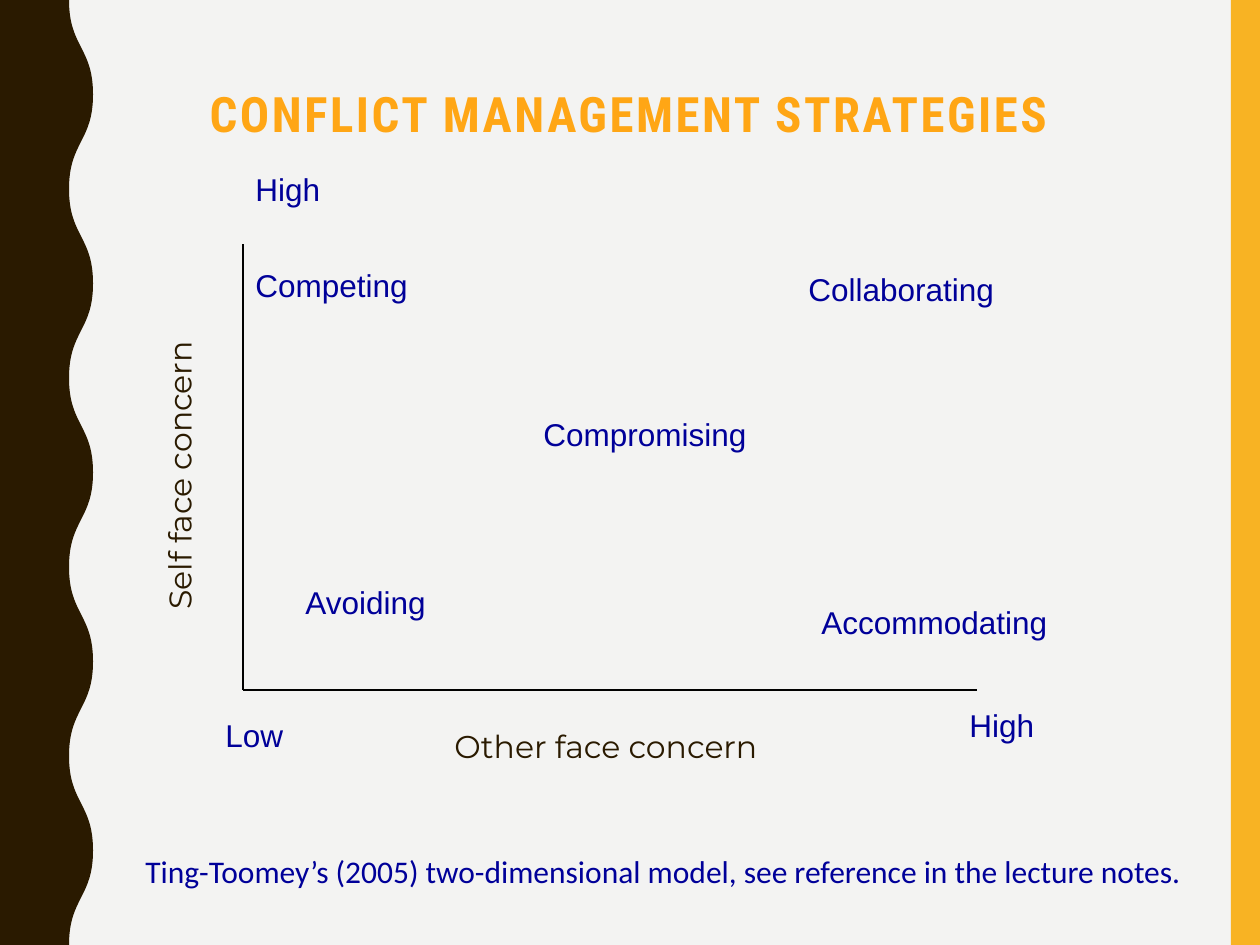
from lxml import etree
from pptx import Presentation
from pptx import util as u
from pptx.dml.color import RGBColor
from pptx.enum import shapes, text
from pptx.oxml import ns

PX = 914400 / 126
WIDTH, HEIGHT = 1260, 945
COLORS = {"paper": "F3F3F2", "stripe": "F8B323", "wave": "2A1A00",
          "title": "FFA615", "label": "000099", "axis": "000000"}
LABEL = {"name": "Arial", "size": u.Pt(18)}
AXIS_TITLE = {"name": "Montserrat", "size": u.Pt(18)}
SOURCE = {"name": "Calibri", "size": u.Pt(18)}
TITLE = {"name": "Roboto Condensed", "size": u.Pt(27.9), "bold": True}


def emu(*lengths):
    return [round(length * PX) for length in lengths]


def color(name):
    return RGBColor.from_string(COLORS[name])


def paint(shape, name):
    shape.shadow.inherit = False
    shape.fill.solid()
    shape.fill.fore_color.rgb = color(name)
    shape.line.fill.background()


def write(para, words, font, color_name):
    span = para.add_run()
    span.text = words
    for key, value in font.items():
        setattr(span.font, key, value)
    span.font.color.rgb = color(color_name)
    return span


def add_text(page, box, words, font, color_name, wrap=False):
    frame = page.shapes.add_textbox(*emu(*box)).text_frame
    frame.word_wrap = wrap
    frame.auto_size = text.MSO_AUTO_SIZE.SHAPE_TO_FIT_TEXT
    write(frame.paragraphs[0], words, font, color_name)
    return frame


def add_axis(page, *ends):
    axis = page.shapes.add_connector(shapes.MSO_CONNECTOR.STRAIGHT, *emu(*ends))
    axis.line.color.rgb = color("axis")
    axis.line.width = u.Pt(0.75)
    etree.SubElement(axis._element.spPr, ns.qn("a:effectLst"))


def add_segment(outline, kind, *points):
    segment = etree.SubElement(outline, ns.qn("a:" + kind))
    for point in points:
        x, y = emu(*point)
        etree.SubElement(segment, ns.qn("a:pt"), x=str(x), y=str(y))


def draw_wave(page, left, top, width, height, trough=69, bends=10):
    """Fill a band whose right edge swings between trough and width."""
    builder = page.shapes.build_freeform(*emu(left, top))
    corners = [(left + width, top), (left + width, top + height), (left, top + height)]
    builder.add_line_segments([emu(*corner) for corner in corners], close=True)
    band = builder.convert_to_shape()
    paint(band, "wave")

    outline = band._element.find(".//" + ns.qn("a:path"))
    for segment in list(outline):
        outline.remove(segment)
    add_segment(outline, "moveTo", (0, 0))
    add_segment(outline, "lnTo", (trough, 0))
    pitch = height / bends
    for bend in range(bends):
        start, end = (trough, width) if bend % 2 == 0 else (width, trough)
        middle = (bend + 0.5) * pitch
        add_segment(outline, "cubicBezTo", (start, middle), (end, middle),
                    (end, (bend + 1) * pitch))
    add_segment(outline, "lnTo", (0, height))
    add_segment(outline, "close")


def draw_frame(page):
    page.background.fill.solid()
    page.background.fill.fore_color.rgb = color("paper")
    stripe = page.shapes.add_shape(shapes.MSO_SHAPE.RECTANGLE,
                                   *emu(1231, 0, WIDTH - 1231, HEIGHT))
    paint(stripe, "stripe")
    draw_wave(page, 0, 0, 93, HEIGHT)


def draw_title(page, *box):
    title = page.shapes.title
    title.left, title.top, title.width, title.height = emu(*box)
    frame = title.text_frame
    settings = {"vertical_anchor": text.MSO_ANCHOR.BOTTOM, "margin_bottom": 0,
                "word_wrap": True, "auto_size": text.MSO_AUTO_SIZE.NONE}
    for key, value in settings.items():
        setattr(frame, key, value)
    para = frame.paragraphs[0]
    para.alignment = text.PP_ALIGN.CENTER
    span = write(para, "CONFLICT MANAGEMENT STRATEGIES", TITLE, "title")
    span.font._element.set("spc", "150")


def draw_model(page, left, top, width, height):
    """Plot the strategies, with the axes along the left and bottom of the box."""
    labels = [
        ("High", 0, -80, 97), ("Low", -30, 466, 90), ("High", 714, 456, 97),
        ("Competing", 0, 16, 197), ("Collaborating", 553, 20, 234),
        ("Compromising", 288, 165, 251), ("Avoiding", 50, 333, 160),
        ("Accommodating", 566, 353, 277),
    ]
    for words, x, y, label_width in labels:
        add_text(page, (left + x, top + y, label_width, 54), words, LABEL, "label")

    add_text(page, (left + 199, top + 477, 396, 54),
             "Other face concern", AXIS_TITLE, "wave")
    upright = add_text(page, (left - 89, top + 11, 67, 367),
                       "Self face concern", AXIS_TITLE, "wave", wrap=True)
    upright.auto_size = text.MSO_AUTO_SIZE.NONE
    upright._txBody.bodyPr.set("vert", "vert270")

    bottom = top + height
    add_axis(page, left, bottom, left, top)
    add_axis(page, left, bottom, left + width, bottom)


def main():
    deck = Presentation()
    deck.slide_width, deck.slide_height = emu(WIDTH, HEIGHT)
    page = deck.slides.add_slide(deck.slide_layouts[5])
    draw_frame(page)
    draw_title(page, 132, 29, 994, 113)
    draw_model(page, 243, 244, 734, 446)
    add_text(page, (133, 846, 1082, 50),
             "Ting-Toomey’s (2005) two-dimensional model, "
             "see reference in the lecture notes.", SOURCE, "label", wrap=True)
    deck.save("out.pptx")


if __name__ == "__main__":
    main()
